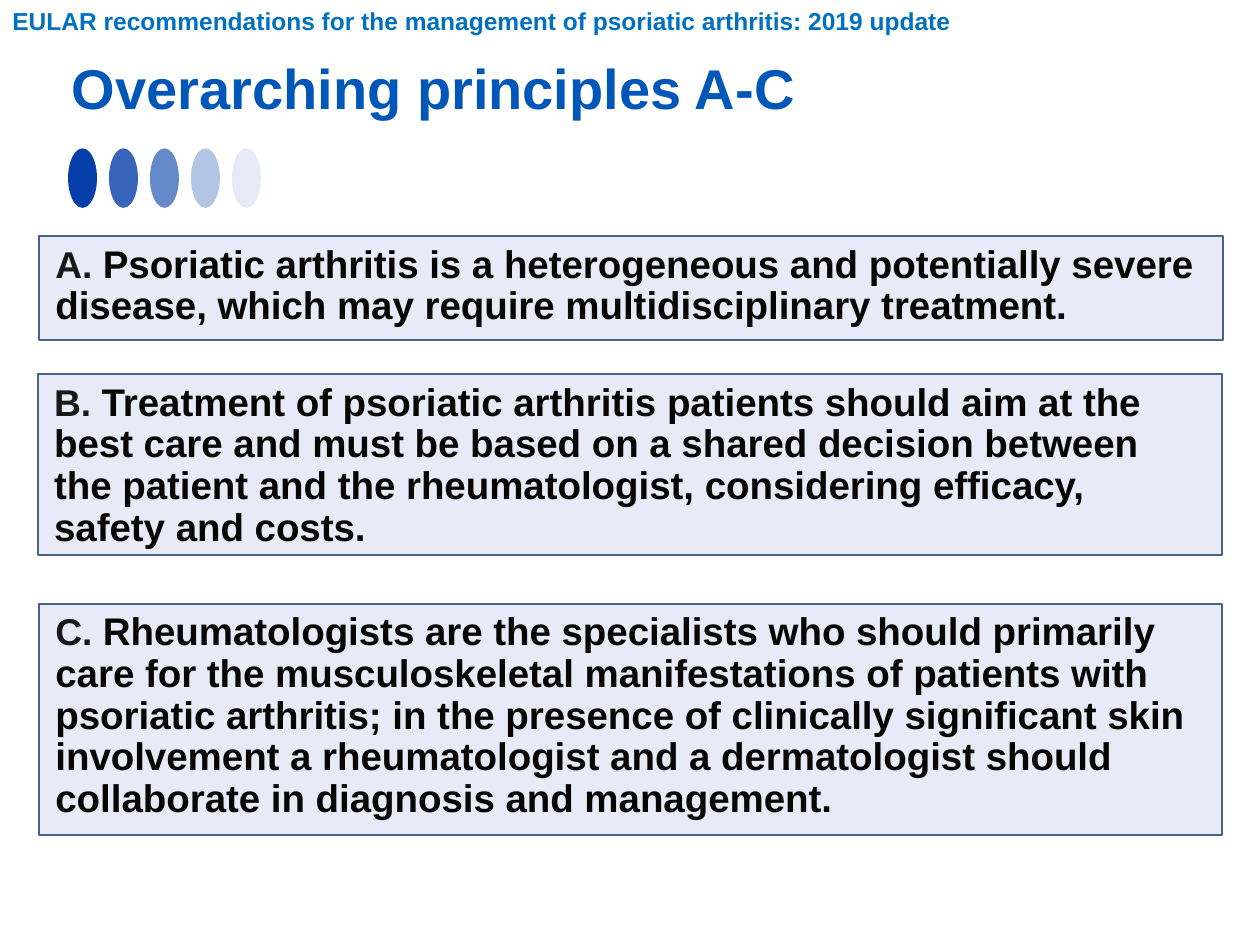
from dataclasses import dataclass

from lxml import etree
from pptx import Presentation
from pptx.dml.color import RGBColor
from pptx.enum.shapes import MSO_SHAPE
from pptx.enum.text import MSO_ANCHOR, MSO_AUTO_SIZE, PP_ALIGN
from pptx.oxml.ns import qn
from pptx.util import Inches, Pt

OVAL, RECT = MSO_SHAPE.OVAL, MSO_SHAPE.RECTANGLE
TOP, LEFT, FIXED = MSO_ANCHOR.TOP, PP_ALIGN.LEFT, MSO_AUTO_SIZE.NONE
WIDE, HIGH = Inches(10), Inches(7.5)


@dataclass(frozen=True)
class Theme:
    font: str = "Arial"
    dot: str = "063FA9"
    panel: str = "E8EBF7"
    edge: str = "466488"
    label: str = "181818"
    body: str = "070605"
    title: str = "0057B8"
    head: str = "0070C0"
    title_size: float = 32
    head_size: float = 14
    label_size: float = 21.3
    body_size: float = 22


THEME = Theme()

# Boxes are left, top, width, height as shares of the slide
HEAD = (0, 0, 0.77, 0.045)
TITLE = (0.047, 0.05, 0.6, 0.085)
DOTS = (0.054, 0.157, 0.153, 0.063)
FADES = (100, 80, 61, 30, 10)
PANELS = (
    ((0.031, 0.25, 0.94, 0.11), "A. ",
     "Psoriatic arthritis is a heterogeneous and potentially severe disease, "
     "which may require multidisciplinary treatment."),
    ((0.03, 0.396, 0.94, 0.191), "B. ",
     "Treatment of psoriatic arthritis patients should aim at the best care "
     "and must be based on a shared decision between the patient and the "
     "rheumatologist, considering efficacy, safety and costs."),
    ((0.031, 0.639, 0.939, 0.245), "C. ",
     "Rheumatologists are the specialists who should primarily care for the "
     "musculoskeletal manifestations of patients with psoriatic arthritis; "
     "in the presence of clinically significant skin involvement a "
     "rheumatologist and a dermatologist should collaborate in diagnosis "
     "and management."),
)


def place(box):
    x, y, w, h = box
    return round(x * WIDE), round(y * HIGH), round(w * WIDE), round(h * HIGH)


def write(shape, *runs, wrap=True, pad=(0.1, 0.05), line=1.0):
    """Fill a shape with one paragraph; each run is (text, size, colour)."""
    frame = shape.text_frame
    frame.auto_size, frame.word_wrap = FIXED, wrap
    frame.vertical_anchor = TOP
    frame.margin_left = frame.margin_right = Inches(pad[0])
    frame.margin_top = frame.margin_bottom = Inches(pad[1])
    para = frame.paragraphs[0]
    para.alignment, para.line_spacing, para.space_before = LEFT, line, Pt(0)
    for text, size, color in runs:
        run = para.add_run()
        run.text = text
        run.font.name, run.font.size, run.font.bold = THEME.font, Pt(size), True
        run.font.color.rgb = RGBColor.from_string(color)


def draw(slide, kind, box, fill):
    shape = slide.shapes.add_shape(kind, *place(box))
    shape.shadow.inherit = False
    shape.fill.solid()
    shape.fill.fore_color.rgb = RGBColor.from_string(fill)
    return shape


def add_title(slide, box):
    title = slide.shapes.title
    title.left, title.top, title.width, title.height = place(box)
    write(title, ("Overarching principles A-C", THEME.title_size, THEME.title),
          wrap=False)


def add_head(slide, box):
    head = slide.shapes.add_textbox(*place(box))
    write(head, ("EULAR recommendations for the management of psoriatic "
                 "arthritis: 2019 update", THEME.head_size, THEME.head),
          wrap=False)


def add_dots(slide, box):
    x, y, w, h = box
    size = w * 0.15
    step = (w - size) / (len(FADES) - 1)
    for i, fade in enumerate(FADES):
        dot = draw(slide, OVAL, (x + i * step, y, size, h), THEME.dot)
        dot.line.fill.background()
        if fade < 100:
            color = dot.fill._xPr.find(".//" + qn("a:srgbClr"))
            etree.SubElement(color, qn("a:alpha"), val=str(fade * 1000))


def add_panel(slide, box, label, text):
    panel = draw(slide, RECT, box, THEME.panel)
    panel.line.color.rgb = RGBColor.from_string(THEME.edge)
    panel.line.width = Pt(1.25)
    write(panel, (label, THEME.label_size, THEME.label),
          (text, THEME.body_size, THEME.body), pad=(0.13, 0.07), line=0.9)


def main():
    deck = Presentation()
    deck.slide_width, deck.slide_height = WIDE, HIGH
    slide = deck.slides.add_slide(deck.slide_layouts[5])
    add_dots(slide, DOTS)
    add_title(slide, TITLE)
    for box, label, text in PANELS:
        add_panel(slide, box, label, text)
    add_head(slide, HEAD)
    deck.save("out.pptx")


if __name__ == "__main__":
    main()
